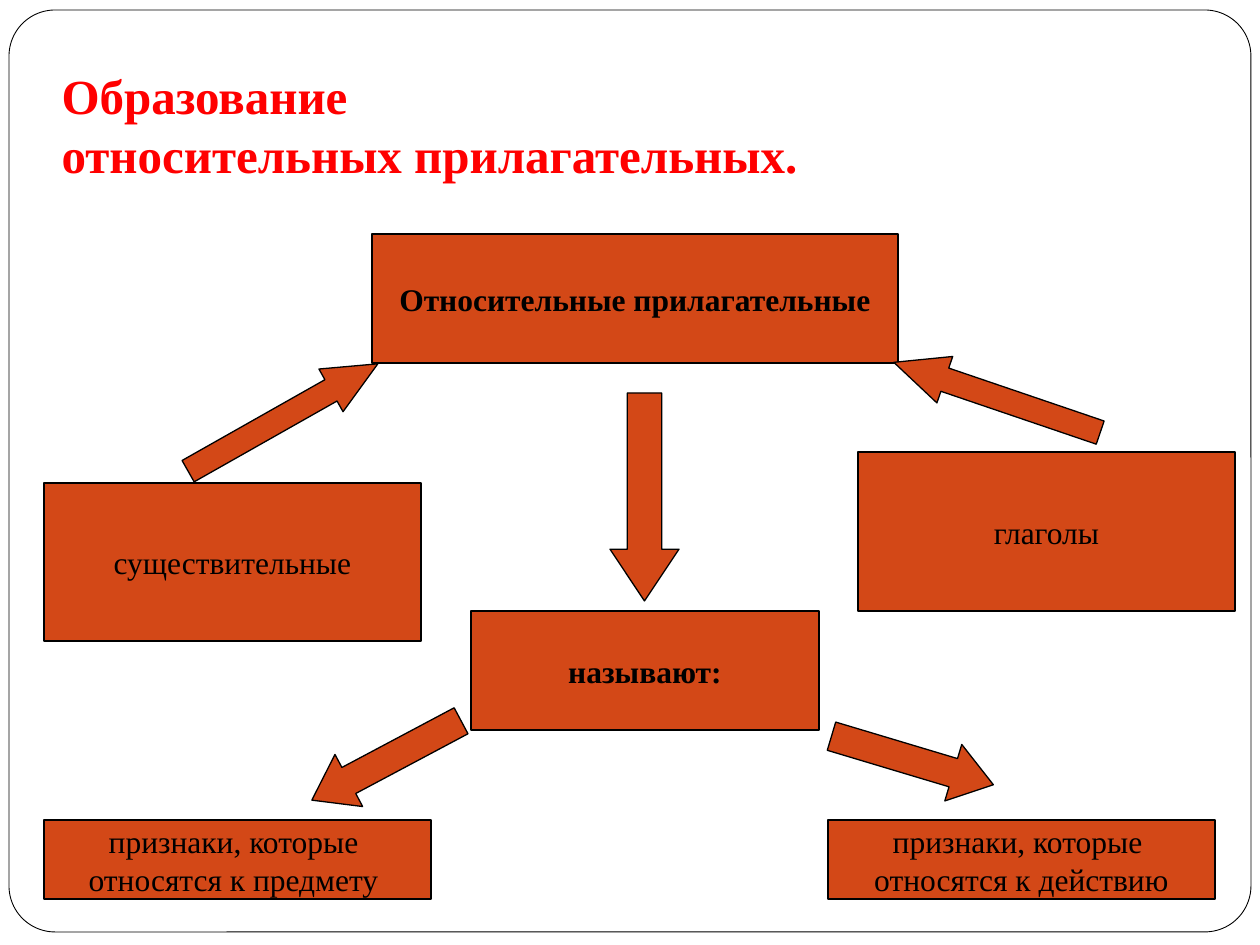
from pptx import Presentation
from pptx.dml.color import RGBColor
from pptx.enum.shapes import MSO_SHAPE
from pptx.enum.text import MSO_ANCHOR, MSO_AUTO_SIZE, PP_ALIGN
from pptx.util import Emu, Pt

RECT, ROUND = MSO_SHAPE.RECTANGLE, MSO_SHAPE.ROUNDED_RECTANGLE
LEFT_ARROW, DOWN_ARROW = MSO_SHAPE.LEFT_ARROW, MSO_SHAPE.DOWN_ARROW
TOP, MIDDLE = MSO_ANCHOR.TOP, MSO_ANCHOR.MIDDLE
LEFT, CENTER = PP_ALIGN.LEFT, PP_ALIGN.CENTER
NO_FIT = MSO_AUTO_SIZE.NONE

EMU_PER_PX = 914400 // 126
FONT = "Times New Roman"
ORANGE, BLACK, WHITE, RED = "D34817", "000000", "FFFFFF", "FF0000"

TITLE = "Образование \vотносительных прилагательных."
TITLE_BOX = (49, 59, 1152, 190)
FRAME_BOX = (9, 10, 1242, 922)

BOXES = [
    ("Относительные прилагательные", (372, 234, 526, 129), True),
    ("существительные", (44, 483, 377, 158), False),
    ("глаголы", (858, 452, 377, 159), False),
    ("называют:", (471, 611, 348, 119), True),
    ("признаки, которые \nотносятся к предмету ", (44, 820, 387, 79), False),
    ("признаки, которые \nотносятся к действию", (828, 820, 387, 79), False),
]

ARROWS = [
    (LEFT_ARROW, (888, 373, 218, 49), 18.8, 1.1),
    (LEFT_ARROW, (174, 393, 218, 49), 150.5, 1.1),
    (DOWN_ARROW, (610, 393, 69, 208), 0, 0.75),
    (LEFT_ARROW, (302, 731, 169, 59), 332, 0.71),
    (LEFT_ARROW, (828, 731, 169, 59), 196.7, 0.71),
]


def rgb(color):
    return RGBColor.from_string(color)


def px(box):
    return [Emu(v * EMU_PER_PX) for v in box]


def add_shape(s, kind, box, fill=ORANGE, width=0.75):
    sp = s.shapes.add_shape(kind, *px(box))
    sp.shadow.inherit = False
    sp.fill.solid()
    sp.fill.fore_color.rgb = rgb(fill)
    sp.line.color.rgb = rgb(BLACK)
    sp.line.width = Pt(width)
    return sp


def set_text(sp, text, size, color, bold, align, anchor, wrap):
    tf = sp.text_frame
    tf.text = text
    tf.word_wrap = wrap
    tf.auto_size = NO_FIT
    tf.vertical_anchor = anchor
    for p in tf.paragraphs:
        p.alignment = align
        p.font.name = FONT
        p.font.size = Pt(size)
        p.font.bold = bold
        p.font.color.rgb = rgb(color)


def main():
    prs = Presentation()
    prs.slide_width, prs.slide_height = px((1260, 945))
    s = prs.slides.add_slide(prs.slide_layouts[5])

    frame = add_shape(s, ROUND, FRAME_BOX, WHITE, 0.5)
    frame.adjustments[0] = 0.05

    for text, box, bold in BOXES:
        sp = add_shape(s, RECT, box)
        set_text(sp, text, 18, BLACK, bold, CENTER, MIDDLE, False)

    for kind, box, angle, head in ARROWS:
        sp = add_shape(s, kind, box)
        sp.rotation = angle
        sp.adjustments[0] = 0.5
        sp.adjustments[1] = head

    title = s.shapes.title
    title.left, title.top, title.width, title.height = px(TITLE_BOX)
    set_text(title, TITLE, 28, RED, True, LEFT, TOP, True)
    s.shapes._spTree.append(title._element)

    prs.save("out.pptx")


if __name__ == "__main__":
    main()
